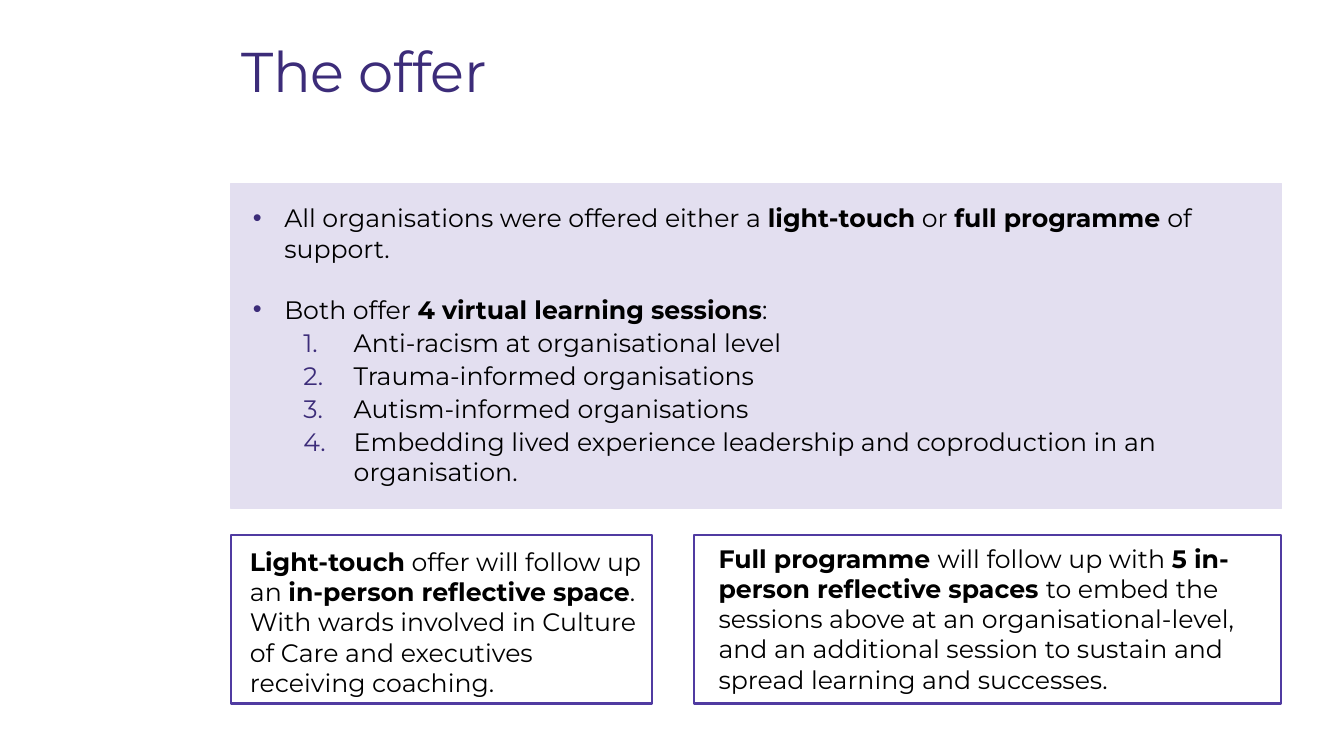
from lxml import etree
from pptx import Presentation
from pptx.dml.color import RGBColor
from pptx.enum import shapes, text
from pptx.oxml import ns
from pptx.util import Cm, Pt

FONT = "Montserrat"
INDIGO = RGBColor(0x3C, 0x2C, 0x79)
VIOLET = RGBColor(0x50, 0x3B, 0xA1)
LILAC = RGBColor(0xE3, 0xDF, 0xF0)
BLACK = RGBColor(0, 0, 0)

LEFT = 5.82
CARD_TOP, CARD_HEIGHT = 13.49, 4.24

POINTS = [
    [("All organisations were offered either a ", False), ("light-touch", True),
     (" or ", False), ("full programme ", True), ("of support.", False)],
    [("Both offer ", False), ("4 virtual learning sessions", True), (":", False)],
]
SESSIONS = [
    "Anti-racism at organisational level",
    "Trauma-informed organisations",
    "Autism-informed organisations",
    "Embedding lived experience leadership and coproduction in an organisation.",
]
LIGHT_TOUCH = [
    ("Light-touch", True), (" offer will follow up an ", False),
    ("in-person reflective space", True),
    (". With wards involved in Culture of Care and executives receiving coaching.", False),
]
FULL_PROGRAMME = [
    ("Full programme ", True), ("will follow up with ", False),
    ("5 in-person reflective spaces ", True),
    ("to embed the sessions above at an organisational-level, and an additional "
     "session to sustain and spread learning and successes.", False),
]


def place(item, left, top, width, height):
    """Position an item, with lengths in centimetres."""
    item.left, item.top = Cm(left), Cm(top)
    item.width, item.height = Cm(width), Cm(height)


def add_run(paragraph, words, size=18, color=BLACK, bold=False):
    """Append one formatted run."""
    run = paragraph.add_run()
    run.text = words
    run.font.name, run.font.size, run.font.bold = FONT, Pt(size), bold
    run.font.color.rgb = color


def add_bullet(paragraph, indent, hanging, tag, font, **marker):
    """Give a paragraph an indigo list marker with a hanging indent."""
    properties = paragraph._p.get_or_add_pPr()
    properties.set("marL", str(Cm(indent)))
    properties.set("indent", str(-Cm(hanging)))
    tint = etree.SubElement(properties, ns.qn("a:buClr"))
    etree.SubElement(tint, ns.qn("a:srgbClr"), val=str(INDIGO))
    etree.SubElement(properties, ns.qn("a:buFont"), typeface=font)
    etree.SubElement(properties, ns.qn(tag), **marker)


def add_rectangle(slide, left, top, width, height, line, weight, fill=None):
    """Add a flat outlined rectangle, optionally filled."""
    rectangle = slide.shapes.add_shape(
        shapes.MSO_SHAPE.RECTANGLE, Cm(left), Cm(top), Cm(width), Cm(height))
    rectangle.shadow.inherit = False
    rectangle.line.color.rgb, rectangle.line.width = line, Pt(weight)
    if fill is None:
        rectangle.fill.background()
    else:
        rectangle.fill.solid()
        rectangle.fill.fore_color.rgb = fill
    return rectangle


def fill_title(title):
    """Write the heading."""
    place(title, LEFT, 0.48, 24.46, 2.77)
    title.text_frame.vertical_anchor = text.MSO_ANCHOR.MIDDLE
    heading = title.text_frame.paragraphs[0]
    heading.alignment = text.PP_ALIGN.LEFT
    heading.line_spacing = 0.9
    for words, size in (("The", 40), (" ", 36), ("offer", 40)):
        add_run(heading, words, size, INDIGO)


def fill_offer(body):
    """Write the bulleted points and the numbered sessions."""
    place(body, 6.12, 4.98, 25.04, 7.47)
    frame = body.text_frame
    frame.auto_size = text.MSO_AUTO_SIZE.NONE
    frame.vertical_anchor = text.MSO_ANCHOR.TOP
    for index, (runs, gap) in enumerate(zip(POINTS, (22, 2))):
        point = frame.add_paragraph() if index else frame.paragraphs[0]
        add_bullet(point, 0.79, 0.79, "a:buChar", "Arial", char="•")
        point.space_before, point.space_after = Pt(0), Pt(gap)
        for words, bold in runs:
            add_run(point, words, bold=bold)
    for name in SESSIONS:
        session = frame.add_paragraph()
        session.level = 1
        add_bullet(session, 2.54, 1.27, "a:buAutoNum", FONT, type="arabicPeriod")
        session.space_before, session.space_after = Pt(0), Pt(2)
        add_run(session, name)


def add_card(slide, left, width, runs, text_left, text_top, text_width):
    """Add an outlined card with its description."""
    add_rectangle(slide, left, CARD_TOP, width, CARD_HEIGHT, VIOLET, 1.5)
    description = slide.shapes.add_textbox(
        Cm(text_left), Cm(text_top), Cm(text_width), Cm(4.11)).text_frame
    description.word_wrap = True
    for words, bold in runs:
        add_run(description.paragraphs[0], words, bold=bold)


def main():
    """Build and save the slide."""
    deck = Presentation()
    deck.slide_width, deck.slide_height = Cm(33.87), Cm(19.05)
    slide = deck.slides.add_slide(deck.slide_layouts[1])
    title, body = slide.placeholders
    fill_title(title)
    fill_offer(body)
    panel = add_rectangle(slide, LEFT, 4.62, 26.47, 8.2, LILAC, 1, LILAC)
    body.element.addprevious(panel.element)
    add_card(slide, LEFT, 10.62, LIGHT_TOUCH, 6.05, 13.64, 10.39)
    add_card(slide, 17.5, 14.79, FULL_PROGRAMME, 17.86, 13.56, 14.07)
    deck.save("out.pptx")


if __name__ == "__main__":
    main()
